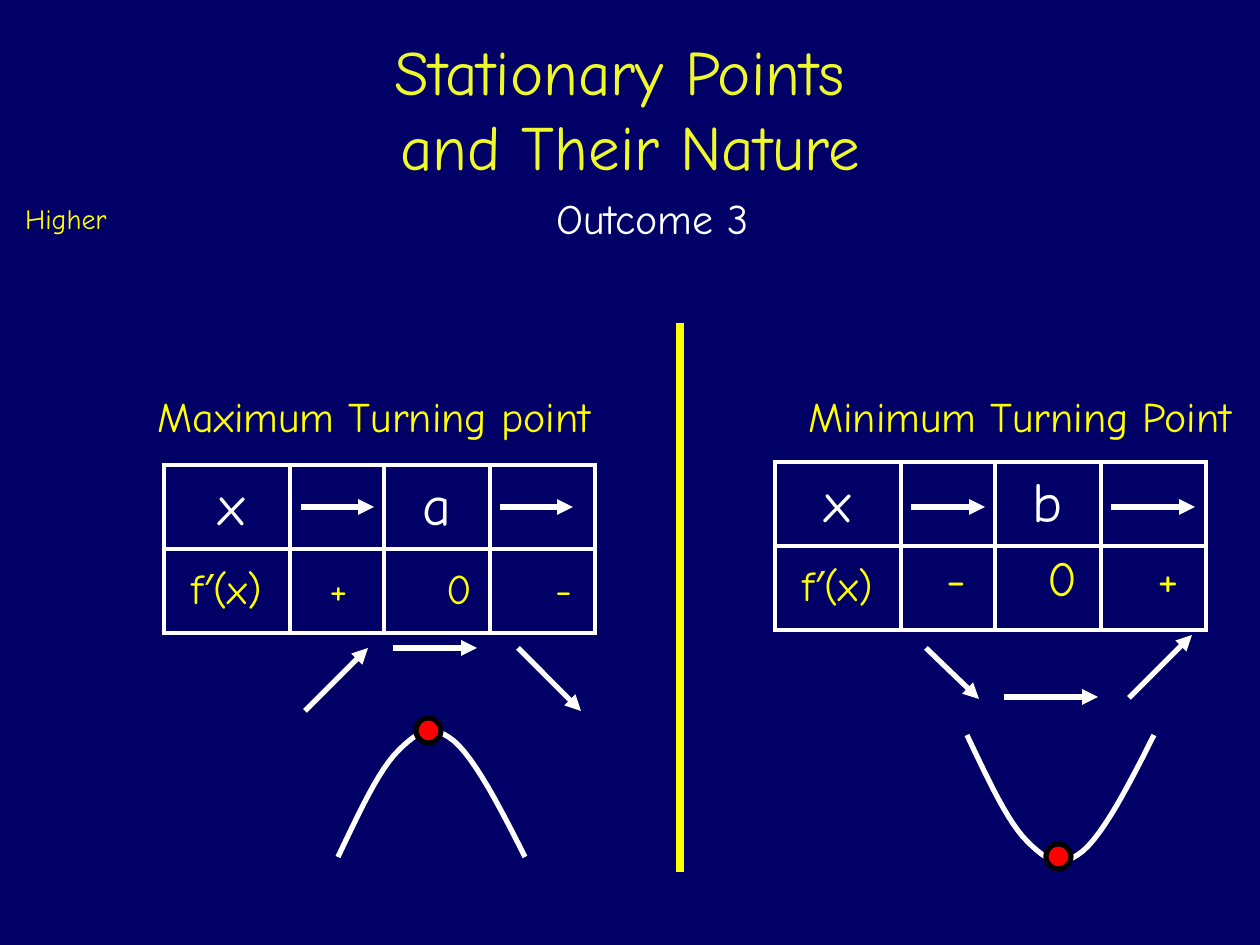
from lxml import etree
from pptx import Presentation
from pptx.dml.color import RGBColor
from pptx.enum.shapes import MSO_CONNECTOR as Connector, MSO_SHAPE as Preset
from pptx.enum.text import MSO_ANCHOR as Anchor, PP_ALIGN as Align
from pptx.oxml import parse_xml
from pptx.oxml.ns import nsdecls, qn
from pptx.util import Pt

NAVY = RGBColor(0x00, 0x00, 0x66)
WHITE = RGBColor(0xFF, 0xFF, 0xFF)
YELLOW = RGBColor(0xFF, 0xFF, 0x00)
LEMON = RGBColor(0xEE, 0xF8, 0x2A)
RED = RGBColor(0xFF, 0x00, 0x00)
BLACK = RGBColor(0x00, 0x00, 0x00)

FONT = "Comic Neue"
EMU_PER_PX = 914400 / 126
COLUMN_WIDTHS = (126, 94, 106, 105)
ROW_HEIGHT = 84
DOT_SIZE = 25
CURVE_STEPS = 12
CURVE_START = (338, 857)
CURVE_SEGMENTS = (
    ((359, 813), (379, 769), (399, 750)),
    ((418, 731), (432, 723), (454, 741)),
    ((475, 759), (500, 807), (525, 857)),
)
MINIMUM_SHIFT = 629
MIRROR_SUM = 1592

TEXTS = (
    (("Maximum Turning point",), (131, 384, 486, 64), 24, YELLOW),
    (("Minimum Turning Point",), (780, 384, 480, 64), 24, YELLOW),
    (("Stationary Points ", "and Their Nature"), (63, 26, 1134, 148), 36, LEMON),
    (("Higher",), (3, 195, 126, 47), 16, YELLOW),
    (("Outcome 3",), (533, 186, 239, 64), 24, WHITE),
)
MAXIMUM_CELLS = (
    (0, 0, "x", 32, WHITE, 10, 0),
    (0, 2, "a", 32, WHITE, 0, 0),
    (1, 0, "f′(x)", 24, YELLOW, 0, 0),
    (1, 1, "+", 24, YELLOW, 4, 0),
    (1, 2, "0", 24, YELLOW, 44, 0),
    (1, 3, "-", 24, YELLOW, 44, 0),
)
MINIMUM_CELLS = (
    (0, 0, "x", 32, WHITE, 0, 0),
    (0, 2, "b", 32, WHITE, 0, 0),
    (1, 0, "f′(x)", 24, YELLOW, 0, 0),
    (1, 1, "-", 28, YELLOW, 16, 14),
    (1, 2, "0", 28, YELLOW, 28, 14),
    (1, 3, "+", 28, YELLOW, 30, 14),
)
ARROWS = (
    (301, 507, 374, 507), (500, 507, 573, 507),
    (305, 711, 368, 648), (393, 648, 477, 648), (518, 648, 581, 711),
    (911, 507, 985, 507), (1111, 507, 1195, 507),
    (926, 648, 979, 699), (1004, 697, 1098, 697), (1129, 698, 1192, 635),
)


def px(length):
    """Turn pixels into EMU."""
    return round(length * EMU_PER_PX)


def add_run(paragraph, text, size, color):
    """Add one styled run to a paragraph."""
    run = paragraph.add_run()
    run.text = text
    run.font.name = FONT
    run.font.size = Pt(size)
    run.font.color.rgb = color


def add_text(slide, lines, box, size, color):
    """Add a centred text box with its lines in one paragraph."""
    frame = slide.shapes.add_textbox(*map(px, box)).text_frame
    frame.word_wrap = True
    paragraph = frame.paragraphs[0]
    paragraph.alignment = Align.CENTER
    for index, line in enumerate(lines):
        if index:
            paragraph.add_line_break()
        add_run(paragraph, line, size, color)


def add_line(slide, ends, color, width, arrow=False):
    """Add a straight line, with an arrowhead at its end if wanted."""
    connector = slide.shapes.add_connector(Connector.STRAIGHT, *map(px, ends))
    connector.line.color.rgb = color
    connector.line.width = Pt(width)
    if arrow:
        etree.SubElement(connector.line._get_or_add_ln(), qn("a:tailEnd"), type="triangle")
    etree.SubElement(connector._element.spPr, qn("a:effectLst"))


def style_cell(cell):
    """Give a cell no fill, white borders and centred contents."""
    cell.fill.background()
    cell.vertical_anchor = Anchor.MIDDLE
    cell.margin_left = cell.margin_right = cell.margin_top = cell.margin_bottom = 0
    cell.text_frame.paragraphs[0].alignment = Align.CENTER
    properties = cell._tc.get_or_add_tcPr()
    for index, side in enumerate("LRTB"):
        properties.insert(index, parse_xml(
            f'<a:ln{side} {nsdecls("a")} w="{Pt(3)}"><a:solidFill>'
            f'<a:srgbClr val="{WHITE}"/></a:solidFill></a:ln{side}>'))


def add_sign_table(slide, left, top, entries):
    """Add a table showing the sign of the derivative."""
    table = slide.shapes.add_table(
        2, len(COLUMN_WIDTHS), px(left), px(top),
        px(sum(COLUMN_WIDTHS)), px(2 * ROW_HEIGHT)).table
    table.first_row = table.horz_banding = False
    for column, width in zip(table.columns, COLUMN_WIDTHS):
        column.width = px(width)
    for row in table.rows:
        row.height = px(ROW_HEIGHT)
    for cell in table.iter_cells():
        style_cell(cell)
    for row, column, text, size, color, indent, lift in entries:
        cell = table.cell(row, column)
        cell.margin_left = px(indent)
        cell.margin_bottom = px(lift)
        add_run(cell.text_frame.paragraphs[0], text, size, color)


def curve_points():
    """Return points along the maximum curve."""
    points = [CURVE_START]
    for first, second, end in CURVE_SEGMENTS:
        start = points[-1]
        for step in range(1, CURVE_STEPS + 1):
            t = step / CURVE_STEPS
            u = 1 - t
            points.append(tuple(
                u**3 * a + 3 * u * u * t * b + 3 * u * t * t * c + t**3 * d
                for a, b, c, d in zip(start, first, second, end)))
    return points


def add_curve(slide, points):
    """Add an open white curve."""
    start, *rest = [(px(x), px(y)) for x, y in points]
    builder = slide.shapes.build_freeform(*start)
    builder.add_line_segments(rest, close=False)
    shape = builder.convert_to_shape()
    shape.shadow.inherit = False
    shape.fill.background()
    shape.line.color.rgb = WHITE
    shape.line.width = Pt(3)


def add_dot(slide, left, top):
    """Add the red dot of a turning point."""
    shape = slide.shapes.add_shape(Preset.OVAL, *map(px, (left, top, DOT_SIZE, DOT_SIZE)))
    shape.shadow.inherit = False
    shape.fill.solid()
    shape.fill.fore_color.rgb = RED
    shape.line.color.rgb = BLACK
    shape.line.width = Pt(3)


def main():
    """Build and save the slide."""
    presentation = Presentation()
    presentation.slide_width = px(1260)
    presentation.slide_height = px(945)
    slide = presentation.slides.add_slide(presentation.slide_layouts[6])
    slide.background.fill.solid()
    slide.background.fill.fore_color.rgb = NAVY

    maximum = curve_points()
    add_curve(slide, [(x + MINIMUM_SHIFT, MIRROR_SUM - y) for x, y in maximum])
    add_curve(slide, maximum)
    add_sign_table(slide, 164, 465, MAXIMUM_CELLS)
    add_sign_table(slide, 775, 462, MINIMUM_CELLS)
    for ends in ARROWS:
        add_line(slide, ends, WHITE, 3, arrow=True)
    add_line(slide, (680, 323, 680, 872), YELLOW, 4.5)
    for lines, box, size, color in TEXTS:
        add_text(slide, lines, box, size, color)
    add_dot(slide, 416, 718)
    add_dot(slide, 1046, 844)
    presentation.save("out.pptx")


if __name__ == "__main__":
    main()
